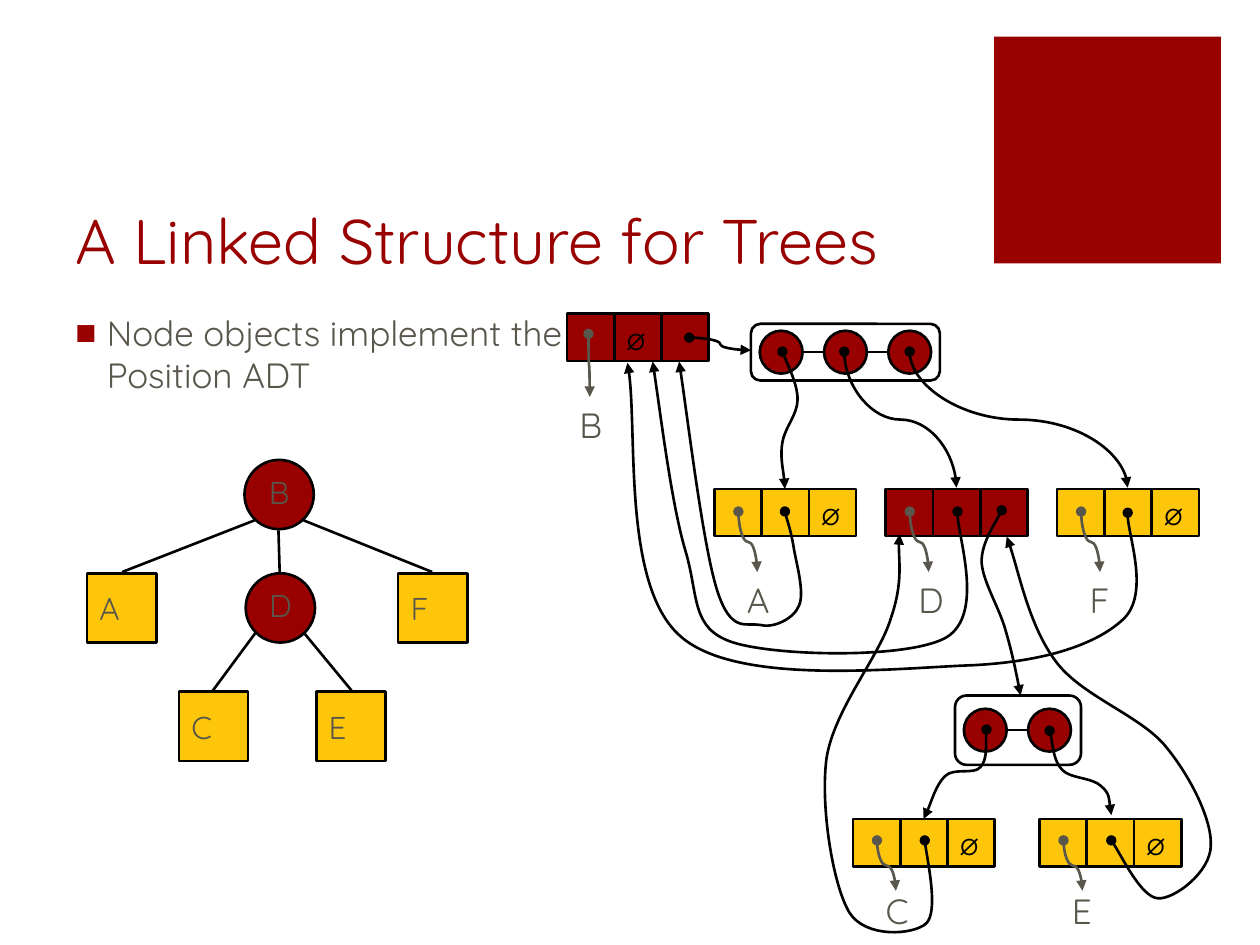
from lxml.etree import SubElement
from pptx import Presentation
from pptx.dml.color import RGBColor
from pptx.enum.shapes import MSO_CONNECTOR, MSO_SHAPE
from pptx.enum.text import MSO_ANCHOR, PP_ALIGN
from pptx.oxml.ns import qn
from pptx.util import Cm, Pt

COLORS = {"red": "990000", "yellow": "FEC60B", "gray": "59564B", "black": "000000"}
CELL = 0.75 / 2
NODE = 0.55
DOT = 0.34
ROW_Y, LEAF_Y = 3.88, 6.5


def inches(value):
    """Length in Cm for a position on the inch grid of the page."""
    return Cm(value * 2.54)


def color(name):
    return RGBColor.from_string(COLORS[name])


def assign(target, values):
    for name, value in values.items():
        setattr(target, name, value)


class TreePage:
    """Holds the page and the one style shared by all its elements."""

    font = "Quicksand"
    width = Pt(1.5)

    def __init__(self, deck):
        self.page = deck.slides.add_slide(deck.slide_layouts[6])

    def label(self, shape, text, size, ink, align=PP_ALIGN.LEFT, **frame_format):
        frame = shape.text_frame
        assign(frame, {"word_wrap": False, **frame_format})
        para = frame.paragraphs[0]
        para.alignment = align
        span = para.add_run()
        span.text = text
        assign(span.font, {"name": self.font, "size": Pt(size)})
        span.font.color.rgb = color(ink)
        return para

    def text(self, text, left, top, width, height, size=20, ink="gray", **frame_format):
        box = self.page.shapes.add_textbox(*map(inches, (left, top, width, height)))
        return self.label(box, text, size, ink, **frame_format)

    def shape(self, kind, left, top, width, height, fill=None, outline="black"):
        shape = self.page.shapes.add_shape(kind, *map(inches, (left, top, width, height)))
        shape.shadow.inherit = False
        if fill:
            shape.fill.solid()
            shape.fill.fore_color.rgb = color(fill)
        else:
            shape.fill.background()
        if outline:
            self.stroke(shape, outline)
        else:
            shape.line.fill.background()
        return shape

    def stroke(self, shape, ink, arrow=False):
        shape.line.width = self.width
        shape.line.color.rgb = color(ink)
        if arrow:
            line = shape.line.fill._xPr
            SubElement(line, qn("a:headEnd"), type="oval")
            SubElement(line, qn("a:tailEnd"), type="triangle")

    def line(self, start, end, kind=MSO_CONNECTOR.STRAIGHT, ink="black", arrow=False):
        line = self.page.shapes.add_connector(kind, *map(inches, (*start, *end)))
        self.stroke(line, ink, arrow)
        SubElement(line._element.spPr, qn("a:effectLst"))
        return line

    def drop(self, start, end, ink="gray"):
        """Curved pointer that leaves and arrives vertically: a turned connector."""
        (x1, y1), (x2, y2) = start, end
        middle_x, middle_y = (x1 + x2) / 2, (y1 + y2) / 2
        half_x, half_y = (x2 - x1) / 2, (y2 - y1) / 2
        line = self.line((middle_x + half_y, middle_y - half_x),
                         (middle_x - half_y, middle_y + half_x),
                         MSO_CONNECTOR.CURVE, ink, arrow=True)
        line._element.spPr.find(qn("a:xfrm")).set("rot", str(270 * 60000))

    def curve(self, start, *points):
        """Bezier pointer: each three points are two handles and an end."""
        builder = self.page.shapes.build_freeform(*map(inches, start), scale=1.0)
        builder.add_line_segments([tuple(map(inches, point)) for point in points], close=False)
        shape = builder.convert_to_shape()
        route = shape._element.spPr.find(".//" + qn("a:path"))
        segments = route.findall(qn("a:lnTo"))
        for first in range(0, len(segments), 3):
            bezier = SubElement(route, qn("a:cubicBezTo"))
            for segment in segments[first:first + 3]:
                bezier.append(segment[0])
                route.remove(segment)
        shape.shadow.inherit = False
        shape.fill.background()
        self.stroke(shape, "black", arrow=True)

    def tree_node(self, name, left, top, inner=False):
        kind, fill = (MSO_SHAPE.OVAL, "red") if inner else (MSO_SHAPE.RECTANGLE, "yellow")
        shape = self.shape(kind, left, top, NODE, NODE, fill)
        layout = {"vertical_anchor": MSO_ANCHOR.MIDDLE}
        if inner:
            layout.update(align=PP_ALIGN.CENTER, margin_left=0, margin_right=0,
                          margin_top=0, margin_bottom=inches(0.05))
        self.label(shape, name, 18, "gray", **layout)

    def record(self, left, top, fill, empty=None):
        """Three cells: element, parent, children; empty is the cell with no link."""
        for index in range(3):
            cell = self.shape(MSO_SHAPE.RECTANGLE, left + index * CELL, top, CELL, CELL, fill)
            if index == empty:
                self.label(cell, "∅", 18, "black", vertical_anchor=MSO_ANCHOR.MIDDLE)

    def element(self, name, left, start_y, end_y, label_y):
        self.drop((left + 0.19, start_y), (left + 0.34, end_y))
        self.text(name, left + 0.16, label_y, 0.36, 0.43)

    def child_list(self, left, top, width, height, count):
        self.shape(MSO_SHAPE.ROUNDED_RECTANGLE, left, top, width, height)
        pitch, middle = 0.51, top + height / 2
        for index in range(count):
            x = left + 0.07 + index * pitch
            if index:
                self.line((x - pitch + DOT, middle), (x, middle))
            self.shape(MSO_SHAPE.OVAL, x, middle - DOT / 2, DOT, DOT, "red")


def main():
    deck = Presentation()
    assign(deck, {"slide_width": inches(10), "slide_height": inches(7.5)})
    page = TreePage(deck)

    page.shape(MSO_SHAPE.RECTANGLE, 7.89, 0.29, 1.8, 1.8, "red", outline=None)
    page.text("A Linked Structure for Trees", 0.5, 1, 7.12, 1.25, 36, "red",
              word_wrap=True, vertical_anchor=MSO_ANCHOR.BOTTOM)
    para = page.text("Node objects implement the Position ADT", 0.5, 2.42, 4.17, 4.28,
                     word_wrap=True)
    props = para._p.get_or_add_pPr()
    props.set("marL", str(inches(0.25)))
    props.set("indent", str(inches(-0.25)))
    SubElement(SubElement(props, qn("a:buClr")), qn("a:srgbClr"), val=COLORS["red"])
    SubElement(props, qn("a:buFont"), typeface="Arial")
    SubElement(props, qn("a:buChar"), char="■")

    for name, left, top, inner in (("B", 1.94, 3.65, True), ("D", 1.95, 4.55, True),
                                   ("A", 0.69, 4.55, False), ("F", 3.16, 4.55, False),
                                   ("C", 1.42, 5.49, False), ("E", 2.51, 5.49, False)):
        page.tree_node(name, left, top, inner)
    for start, end in (((0.97, 4.54), (2.02, 4.13)), ((2.22, 4.54), (2.21, 4.21)),
                       ((3.43, 4.54), (2.41, 4.13)), ((1.69, 5.48), (2.03, 5.02)),
                       ((2.79, 5.48), (2.41, 5.02))):
        page.line(start, end)

    page.record(4.5, 2.49, "red", empty=1)
    page.drop((4.67, 2.65), (4.68, 3.15))
    page.text("B", 4.5, 3.15, 0.36, 0.43)
    page.child_list(5.96, 2.57, 1.5, 0.45, 3)
    page.child_list(7.58, 5.52, 1, 0.55, 2)

    for name, left, fill, empty in (("A", 5.67, "yellow", 2), ("D", 7.03, "red", None),
                                    ("F", 8.39, "yellow", 2)):
        page.record(left, ROW_Y, fill, empty)
        page.element(name, left, 4.06, 4.54, 4.54)
    for name, left in (("C", 6.77), ("E", 8.25)):
        page.record(left, LEAF_Y, "yellow", 2)
        page.element(name, left, 6.67, 7.07, 7.01)

    # Links from parents to children
    page.line((5.47, 2.68), (5.96, 2.78), MSO_CONNECTOR.CURVE, arrow=True)
    page.drop((6.7, 2.79), (7.59, 3.87), "black")
    page.drop((7.22, 2.79), (8.95, 3.87), "black")
    page.curve((6.21, 2.79), (6.23, 2.85), (6.33, 3.05), (6.33, 3.17),
               (6.33, 3.29), (6.23, 3.39), (6.21, 3.51), (6.19, 3.62), (6.23, 3.8), (6.23, 3.88))
    page.curve((7.95, 4.05), (7.92, 4.12), (7.79, 4.31), (7.79, 4.46),
               (7.8, 4.62), (7.93, 4.82), (7.98, 5), (8.03, 5.17), (8.08, 5.41), (8.1, 5.52))
    page.curve((8.33, 5.8), (8.35, 5.85), (8.36, 6.04), (8.43, 6.11),
               (8.49, 6.18), (8.67, 6.17), (8.74, 6.24), (8.81, 6.3), (8.81, 6.42), (8.82, 6.47))
    page.curve((7.83, 5.79), (7.82, 5.84), (7.84, 6.03), (7.78, 6.09),
               (7.73, 6.15), (7.57, 6.09), (7.5, 6.16), (7.43, 6.23), (7.37, 6.43), (7.33, 6.5))

    # Links from children back to parents
    page.curve((6.23, 4.06), (6.24, 4.11), (6.28, 4.22), (6.3, 4.35),
               (6.32, 4.47), (6.39, 4.71), (6.34, 4.81), (6.3, 4.91), (6.14, 4.99), (6.03, 4.96),
               (5.92, 4.94), (5.8, 5.03), (5.69, 4.68), (5.58, 4.33), (5.45, 3.25), (5.39, 2.87))
    page.curve((7.6, 4.06), (7.59, 4.22), (7.81, 4.88), (7.51, 5.06),
               (7.21, 5.23), (6.17, 5.21), (5.82, 5.1), (5.48, 4.99), (5.55, 4.74), (5.44, 4.37),
               (5.33, 4), (5.23, 3.18), (5.18, 2.87))
    page.curve((8.95, 4.07), (8.94, 4.21), (9.12, 4.71), (8.92, 4.91),
               (8.71, 5.11), (8.31, 5.25), (7.72, 5.28), (7.13, 5.3), (5.85, 5.45), (5.4, 5.05),
               (4.94, 4.65), (5.07, 3.33), (4.98, 2.88))
    page.curve((7.34, 6.67), (7.35, 6.78), (7.45, 7.24), (7.35, 7.33),
               (7.25, 7.42), (6.87, 7.45), (6.74, 7.24), (6.61, 7.02), (6.51, 6.4), (6.56, 6.02),
               (6.62, 5.63), (6.98, 5.21), (7.07, 4.91), (7.17, 4.62), (7.12, 4.38), (7.14, 4.24))
    page.curve((8.82, 6.67), (8.88, 6.75), (9.06, 7.12), (9.19, 7.13),
               (9.32, 7.14), (9.61, 6.92), (9.61, 6.71), (9.62, 6.51), (9.45, 6.16), (9.24, 5.91),
               (9.03, 5.67), (8.58, 5.52), (8.38, 5.25), (8.17, 4.97), (8.07, 4.46), (7.99, 4.26))
    deck.save("out.pptx")


if __name__ == "__main__":
    main()
